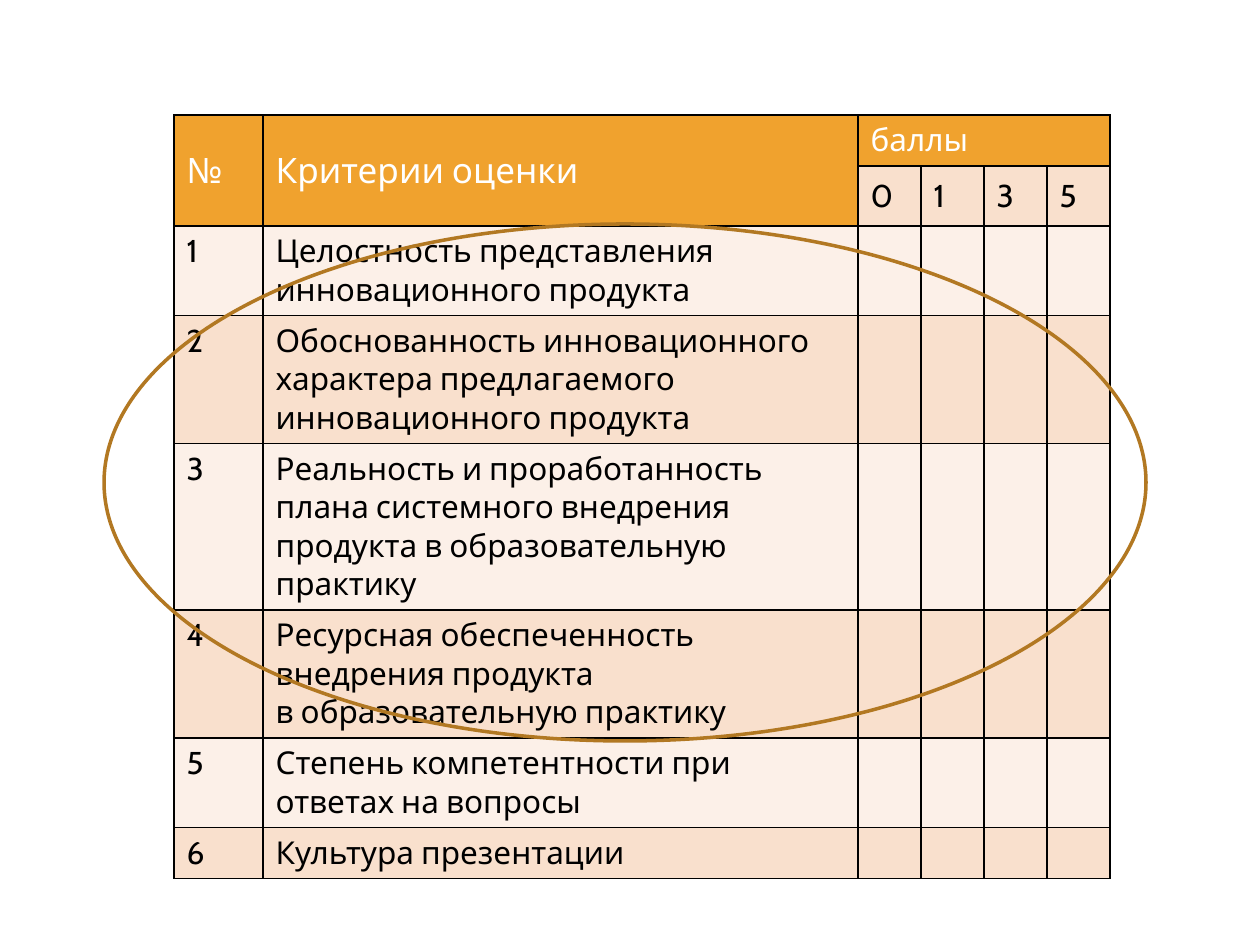
from lxml.etree import SubElement
from pptx import Presentation
from pptx.dml.color import RGBColor
from pptx.enum.shapes import MSO_SHAPE
from pptx.enum.text import MSO_ANCHOR
from pptx.oxml.ns import qn
from pptx.util import Emu, Pt

EMU_PER_PX = 914400 / 126

WHITE = RGBColor(0xFF, 0xFF, 0xFF)
BLACK = RGBColor(0x00, 0x00, 0x00)
ORANGE = RGBColor(0xF0, 0xA2, 0x2E)
PEACH = RGBColor(0xF9, 0xE0, 0xCD)
CREAM = RGBColor(0xFC, 0xF0, 0xE8)
BROWN = RGBColor(0xB2, 0x78, 0x22)

SCORES = ["0", "1", "3", "5"]
CRITERIA = [
    "Целостность представления инновационного продукта",
    "Обоснованность инновационного характера предлагаемого инновационного продукта",
    "Реальность и проработанность плана системного внедрения продукта в образовательную практику",
    "Ресурсная обеспеченность внедрения продукта\nв образовательную практику",
    "Степень компетентности при ответах на вопросы",
    "Культура презентации",
]
COLUMN_WIDTHS = [89, 595] + [63] * len(SCORES)
ROW_HEIGHTS = [51, 60] + [51] * len(CRITERIA)


def px(length):
    return Emu(round(length * EMU_PER_PX))


class SlideBuilder:
    """Holds the style and the current slide."""

    font = "Cabin"
    border = Pt(1)

    def __init__(self, slide):
        self.slide = slide

    def table(self, left, top, height, widths, heights):
        frame = self.slide.shapes.add_table(
            len(heights), len(widths), px(left), px(top), px(sum(widths)), px(height))
        grid = frame.table
        for column, width in zip(grid.columns, widths):
            column.width = px(width)
        for row, row_height in zip(grid.rows, heights):
            row.height = px(row_height)
        return grid

    def cell(self, cell, text, fill, color=BLACK, size=18, anchor=MSO_ANCHOR.TOP):
        self.cell_borders(cell)
        cell.fill.solid()
        cell.fill.fore_color.rgb = fill
        cell.vertical_anchor = anchor
        cell.text_frame.text = text
        for paragraph in cell.text_frame.paragraphs:
            for run in paragraph.runs:
                run.font.name = self.font
                run.font.size = Pt(size)
                run.font.bold = False
                run.font.color.rgb = color

    def cell_borders(self, cell):
        properties = cell._tc.get_or_add_tcPr()
        for side in ("a:lnL", "a:lnR", "a:lnT", "a:lnB"):
            line = SubElement(properties, qn(side), w=str(self.border))
            solid = SubElement(line, qn("a:solidFill"))
            SubElement(solid, qn("a:srgbClr"), val=str(BLACK))

    def ellipse(self, left, top, width, height, color, weight):
        outline = self.slide.shapes.add_shape(
            MSO_SHAPE.OVAL, px(left), px(top), px(width), px(height))
        outline.shadow.inherit = False
        outline.fill.background()
        outline.line.color.rgb = color
        outline.line.width = Pt(weight)


def main():
    presentation = Presentation()
    presentation.slide_width = px(1260)
    presentation.slide_height = px(945)
    builder = SlideBuilder(presentation.slides.add_slide(presentation.slide_layouts[6]))

    criteria_table = builder.table(174, 115, 717, COLUMN_WIDTHS, ROW_HEIGHTS)

    # Header rows
    middle = MSO_ANCHOR.MIDDLE
    headings = ["№", "Критерии оценки", "баллы"] + [""] * (len(SCORES) - 1)
    for column, heading in enumerate(headings):
        size = 20 if column < 2 else 18
        builder.cell(criteria_table.cell(0, column), heading, ORANGE, WHITE, size, middle)
    for column, score in enumerate(["", ""] + SCORES):
        fill = ORANGE if column < 2 else PEACH
        builder.cell(criteria_table.cell(1, column), score, fill, anchor=middle)
    for column in range(2):
        criteria_table.cell(0, column).merge(criteria_table.cell(1, column))
    criteria_table.cell(0, 2).merge(criteria_table.cell(0, len(COLUMN_WIDTHS) - 1))

    # Numbered criteria in alternating bands
    for number, criterion in enumerate(CRITERIA, start=1):
        band = CREAM if number % 2 else PEACH
        for column, text in enumerate([str(number), criterion] + [""] * len(SCORES)):
            builder.cell(criteria_table.cell(number + 1, column), text, band)

    # Ellipse around the criteria
    builder.ellipse(104, 224, 1042, 517, BROWN, 2)

    presentation.save("out.pptx")


if __name__ == "__main__":
    main()
